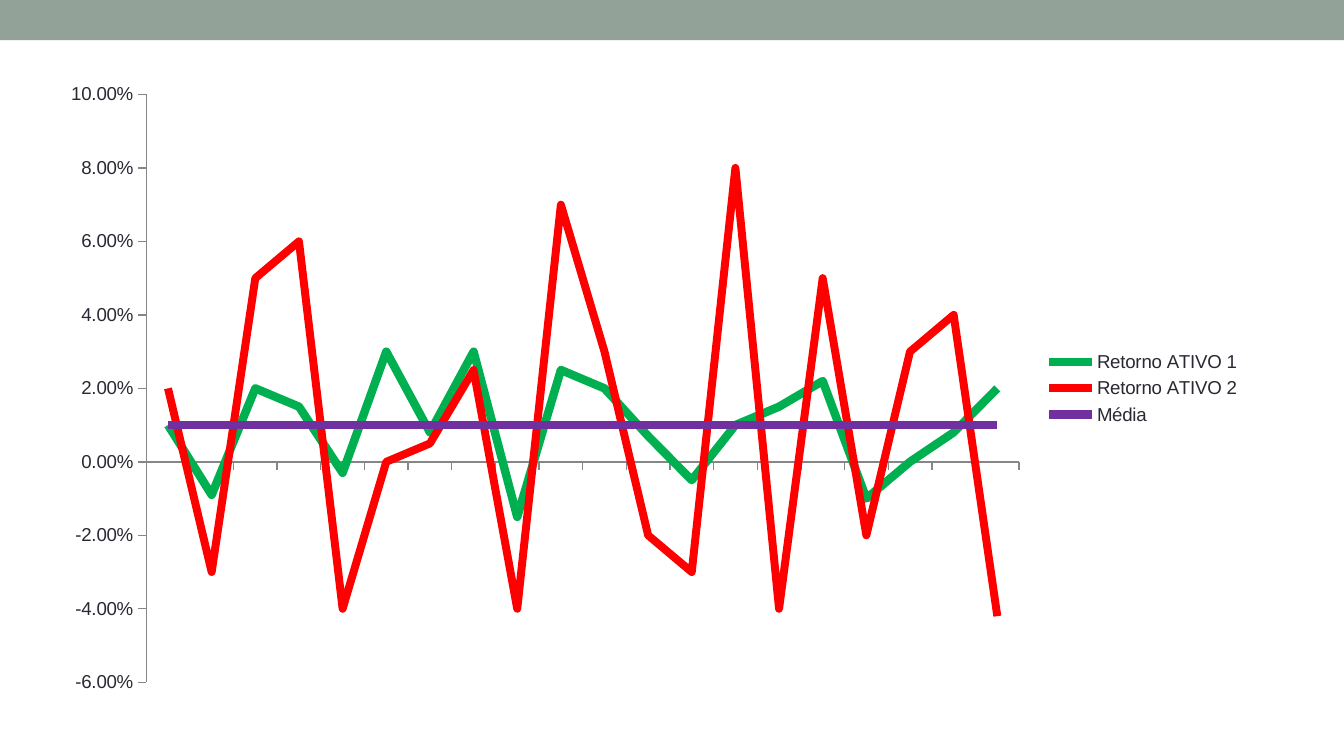
from pptx import Presentation
from pptx.chart import data
from pptx.dml.color import RGBColor
from pptx.enum import chart as ch, shapes
from pptx.util import Pt


def rgb(value):
    return RGBColor.from_string(value)


class SlideBuilder:
    font = "Arial"
    font_size = 10
    ink = "292934"
    axis_color = "868686"
    percent = "0.00%"

    def __init__(self, slide):
        self.slide = slide

    def band(self, left, top, width, height, color):
        band = self.slide.shapes.add_shape(
            shapes.MSO_SHAPE.RECTANGLE, Pt(left), Pt(top), Pt(width), Pt(height))
        band.shadow.inherit = False
        band.fill.solid()
        band.fill.fore_color.rgb = rgb(color)
        band.line.fill.background()

    def axis(self, axis):
        axis.has_major_gridlines = False
        axis.major_tick_mark = ch.XL_TICK_MARK.OUTSIDE
        axis.minor_tick_mark = ch.XL_TICK_MARK.NONE
        axis.format.line.color.rgb = rgb(self.axis_color)
        axis.format.line.width = Pt(0.75)

    def line_chart(self, left, top, width, height, categories, series):
        """Draw a line chart; series holds (name, values, color, line width)."""
        returns = data.CategoryChartData(number_format=self.percent)
        returns.categories = categories
        for name, values, _, _ in series:
            returns.add_series(name, values)
        chart = self.slide.shapes.add_chart(
            ch.XL_CHART_TYPE.LINE, Pt(left), Pt(top), Pt(width), Pt(height),
            returns).chart
        chart.has_title = False
        chart.font.name = self.font
        chart.font.size = Pt(self.font_size)
        chart.font.color.rgb = rgb(self.ink)
        chart.has_legend = True
        chart.legend.position = ch.XL_LEGEND_POSITION.RIGHT
        chart.legend.include_in_layout = False

        self.axis(chart.category_axis)
        chart.category_axis.tick_label_position = ch.XL_TICK_LABEL_POSITION.NONE
        scale = chart.value_axis
        self.axis(scale)
        scale.minimum_scale, scale.maximum_scale = -0.06, 0.1
        scale.major_unit = 0.02
        scale.tick_labels.number_format = self.percent
        scale.tick_labels.number_format_is_linked = False

        plot = chart.plots[0]
        plot.vary_by_categories = False
        for curve, (_, _, color, weight) in zip(plot.series, series):
            curve.smooth = False
            curve.marker.style = ch.XL_MARKER_STYLE.NONE
            curve.format.line.color.rgb = rgb(color)
            curve.format.line.width = Pt(weight)


ASSET_1 = [0.01, -0.009, 0.02, 0.015, -0.003, 0.03, 0.008, 0.03, -0.015, 0.025,
           0.02, 0.007, -0.005, 0.01, 0.015, 0.022, -0.01, 0, 0.008, 0.02]
ASSET_2 = [0.02, -0.03, 0.05, 0.06, -0.04, 0, 0.005, 0.025, -0.04, 0.07,
           0.03, -0.02, -0.03, 0.08, -0.04, 0.05, -0.02, 0.03, 0.04, -0.042]
PERIODS = len(ASSET_1)


def main():
    deck = Presentation()
    deck.slide_width, deck.slide_height = Pt(720), Pt(405)
    builder = SlideBuilder(deck.slides.add_slide(deck.slide_layouts[6]))
    builder.band(0, 0, 720, 21.6, "93A299")
    builder.line_chart(
        25.2, 38.2, 646.6, 339.8,
        [str(period) for period in range(1, PERIODS + 1)],
        [("Retorno ATIVO 1", ASSET_1, "00B050", 4.5),
         ("Retorno ATIVO 2", ASSET_2, "FF0000", 4.25),
         ("Média", [0.01] * PERIODS, "7030A0", 4.5)])
    deck.save("out.pptx")


if __name__ == "__main__":
    main()
